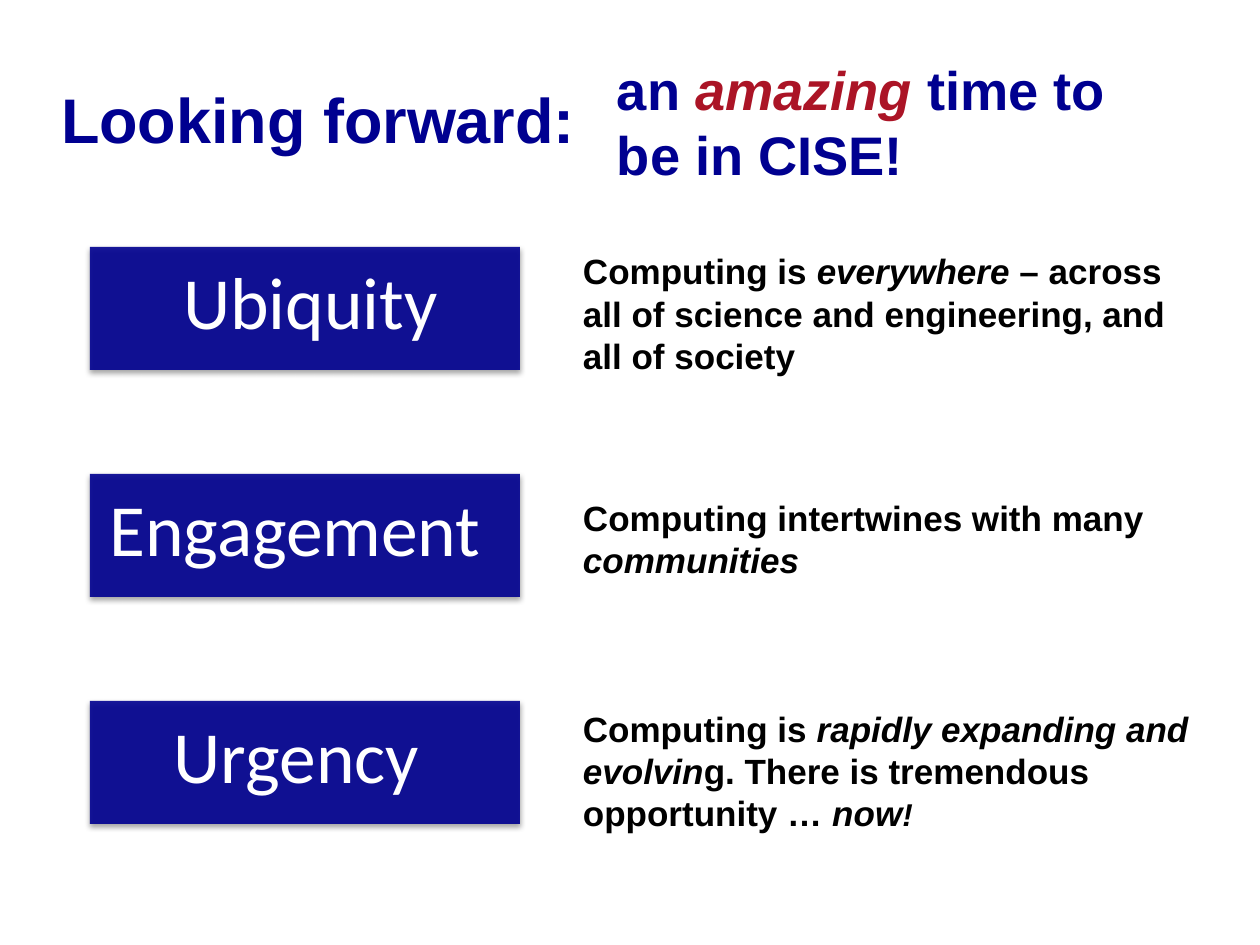
from lxml.etree import SubElement
from pptx import Presentation
from pptx.dml.color import RGBColor
from pptx.enum.shapes import MSO_SHAPE
from pptx.enum.text import MSO_ANCHOR, PP_ALIGN
from pptx.oxml.ns import qn
from pptx.util import Emu, Pt

NAVY = RGBColor(0x00, 0x00, 0x90)
CRIMSON = RGBColor(0xAB, 0x14, 0x26)
BLACK = RGBColor(0x00, 0x00, 0x00)
WHITE = RGBColor(0xFF, 0xFF, 0xFF)

# Each theme: label, label left and width, description top, width and runs
THEMES = [
    ("Ubiquity", 78, 285, -1, 614,
     [("Computing is ", {}), ("everywhere", {"italic": True}),
      (" – across all of science and engineering, and all of society", {})]),
    ("Engagement", 0, 410, 19, 672,
     [("Computing intertwines with many ", {}),
      ("communities", {"italic": True})]),
    ("Urgency", 64, 285, 2, 633,
     [("Computing is ", {}),
      ("rapidly expanding and evolvin", {"italic": True}),
      ("g. There is tremendous opportunity … ", {}),
      ("now", {"italic": True}), ("!", {"italic": True, "size": 18})]),
]


def px(length):
    return Emu(round(length * 914400 / 126))


def add_text(slide, left, top, width, height, runs, size, color,
             font="Arial", bold=True, margins=(9, 4),
             align=PP_ALIGN.LEFT, anchor=MSO_ANCHOR.TOP):
    """Add a one-paragraph text box; each run is its text and overrides."""
    box = slide.shapes.add_textbox(px(left), px(top), px(width), px(height))
    frame = box.text_frame
    frame.word_wrap = True
    frame.vertical_anchor = anchor
    frame.margin_left = frame.margin_right = px(margins[0])
    frame.margin_top = frame.margin_bottom = px(margins[1])
    paragraph = frame.paragraphs[0]
    paragraph.alignment = align
    for text, style in runs:
        run = paragraph.add_run()
        run.text = text
        run.font.name = font
        run.font.bold = bold
        run.font.italic = style.get("italic", False)
        run.font.size = Pt(style.get("size", size))
        run.font.color.rgb = style.get("color", color)


def add_panel(slide, left, top, width, height):
    """Add a slightly transparent navy rectangle with a soft drop shadow."""
    panel = slide.shapes.add_shape(
        MSO_SHAPE.RECTANGLE, px(left), px(top), px(width), px(height))
    panel.fill.solid()
    panel.fill.fore_color.rgb = NAVY
    panel.line.fill.background()
    panel.shadow.inherit = False
    properties = panel.element.spPr
    fill_color = properties.find(qn("a:solidFill")).find(qn("a:srgbClr"))
    SubElement(fill_color, qn("a:alpha"), val="90000")
    shadow = SubElement(
        properties.find(qn("a:effectLst")), qn("a:outerShdw"),
        blurRad=str(Pt(3.1)), dist=str(Pt(1.6)), dir="5400000", rotWithShape="0")
    shadow_color = SubElement(shadow, qn("a:srgbClr"), val="000000")
    SubElement(shadow_color, qn("a:alpha"), val="38000")


def add_heading(slide, left, top, width, height):
    style = {"color": NAVY, "margins": (13, 6), "anchor": MSO_ANCHOR.MIDDLE}
    add_text(slide, left, top, width, height,
             [("Looking forward:", {})], 36, **style)
    add_text(slide, left + 556, top + 3, 590, height,
             [("an ", {}), ("amazing ", {"color": CRIMSON, "italic": True}),
              ("time to be in CISE!", {})], 31, **style)


def add_theme(slide, left, top, theme):
    label, label_left, label_width, text_top, text_width, runs = theme
    add_panel(slide, left, top, 430, 123)
    add_text(slide, left + label_left, top + 9, label_width, 89,
             [(label, {})], 42, WHITE, font="Calibri", bold=False,
             margins=(0, 0), align=PP_ALIGN.CENTER)
    add_text(slide, left + 484, top + text_top, text_width, 136,
             runs, 20, BLACK)


def main():
    presentation = Presentation()
    presentation.slide_width = px(1260)
    presentation.slide_height = px(945)
    slide = presentation.slides.add_slide(presentation.slide_layouts[6])
    add_heading(slide, 48, 39, 1176, 158)
    for index, theme in enumerate(THEMES):
        add_theme(slide, 90, 247 + 227 * index, theme)
    presentation.save("out.pptx")


if __name__ == "__main__":
    main()
